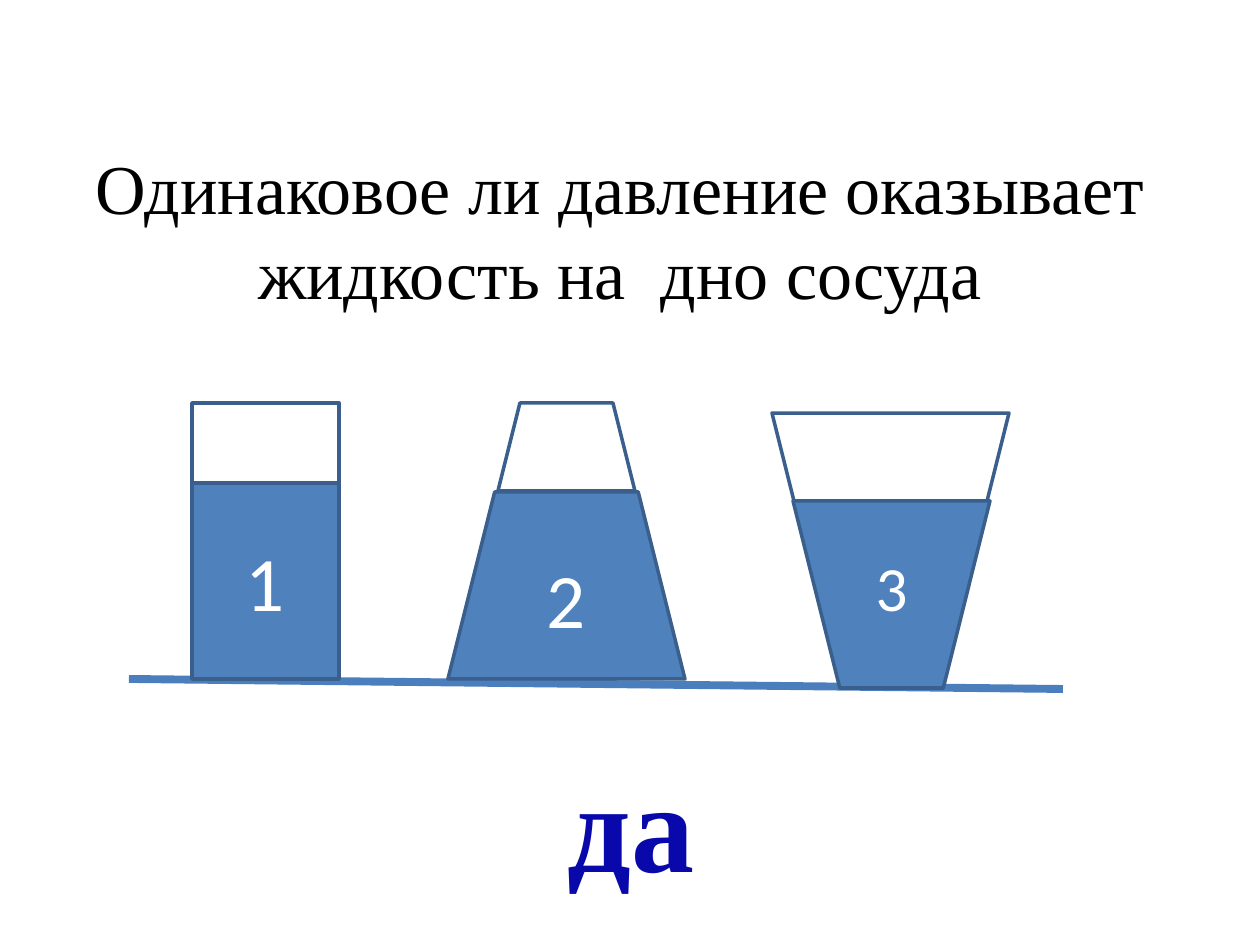
"""Builds a slide asking whether liquid presses equally on the bottoms of three vessels."""
import pptx
import pptx.dml.color
import pptx.enum.shapes
import pptx.enum.text
import pptx.oxml
import pptx.util

SHAPE = pptx.enum.shapes.MSO_SHAPE
LIQUID, GLASS, EDGE, SHELF = "4F81BD", "FFFFFF", "3A5F8C", "4B7EBC"
SERIF, SANS = "Times New Roman", "Calibri"
LEADING = 1.215

# Each text: wording, box, size, font, colour, bold, line height
HEADINGS = [
    ("Одинаковое ли давление оказывает жидкость на  дно сосуда",
     (39, 137, 1162, 183), 40, SERIF, "000000", False),
    ("да", (227, 738, 808, 165), 72, SERIF, "0909AB", True),
]
SHELF_ENDS = (129, 679, 1063, 689)
VESSELS = [
    (SHAPE.RECTANGLE, (192, 483, 147, 196), 0, LIQUID, "1"),
    (SHAPE.RECTANGLE, (192, 403, 147, 80), 0, GLASS, ""),
    (SHAPE.TRAPEZOID, (448, 492, 237, 187), 0, LIQUID, "2"),
    (SHAPE.TRAPEZOID, (772, 413, 237, 88), 180, GLASS, ""),
    (SHAPE.TRAPEZOID, (793, 501, 197, 187), 180, LIQUID, ""),
    (SHAPE.TRAPEZOID, (498, 403, 137, 88), 0, GLASS, ""),
]
THIRD_LABEL = ("3", (862, 542, 59, 89), 36, SANS, "FFFFFF", False)


def px(*lengths):
    return [pptx.util.Emu(round(n * 914400 / 126)) for n in lengths]


def rgb(color):
    return pptx.dml.color.RGBColor.from_string(color)


def write(s, text, size, font, color, bold=False):
    tf = s.text_frame
    tf.word_wrap = True
    p = tf.paragraphs[0]
    p.text = text
    p.alignment = pptx.enum.text.PP_ALIGN.CENTER
    p.font.size = pptx.util.Pt(size)
    p.font.name = font
    p.font.bold = bold
    p.font.color.rgb = rgb(color)
    return p


def add_text(shapes, text, box, size, font, color, bold):
    p = write(shapes.add_textbox(*px(*box)), text, size, font, color, bold)
    if font == SERIF:
        p.line_spacing = pptx.util.Pt(round(size * LEADING, 1))


def add_vessel(shapes, kind, box, turn, fill, label):
    s = shapes.add_shape(kind, *px(*box))
    s.rotation = turn
    s.shadow.inherit = False
    s.fill.solid()
    s.fill.fore_color.rgb = rgb(fill)
    s.line.color.rgb = rgb(EDGE)
    s.line.width = pptx.util.Pt(2)
    if label:
        s.text_frame.vertical_anchor = pptx.enum.text.MSO_ANCHOR.MIDDLE
        write(s, label, 44, SANS, "FFFFFF")


def add_shelf(shapes):
    s = shapes.add_connector(pptx.enum.shapes.MSO_CONNECTOR.STRAIGHT, *px(*SHELF_ENDS))
    s.line.color.rgb = rgb(SHELF)
    s.line.width = pptx.util.Pt(4.5)
    s._element.spPr.append(pptx.oxml.parse_xml(
        '<a:effectLst xmlns:a="http://schemas.openxmlformats.org/drawingml/2006/main"/>'))


def main():
    prs = pptx.Presentation()
    prs.slide_width, prs.slide_height = px(1260, 945)
    shapes = prs.slides.add_slide(prs.slide_layouts[6]).shapes
    for heading in HEADINGS:
        add_text(shapes, *heading)
    group = shapes.add_group_shape().shapes
    add_shelf(group)
    for vessel in VESSELS:
        add_vessel(group, *vessel)
    add_text(group, *THIRD_LABEL)
    prs.save("out.pptx")


if __name__ == "__main__":
    main()
